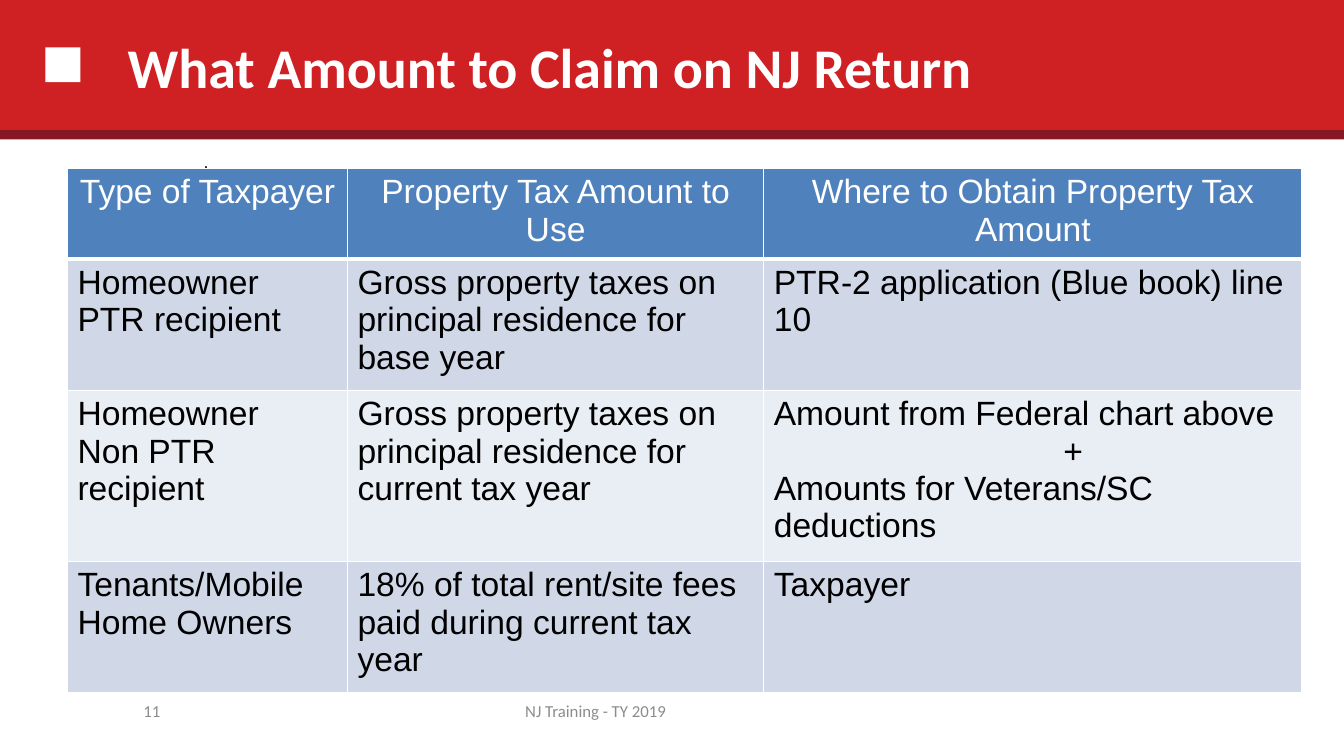
from lxml.etree import SubElement
from pptx import Presentation
from pptx.dml.color import RGBColor
from pptx.enum.shapes import MSO_SHAPE
from pptx.enum.text import MSO_ANCHOR, PP_ALIGN
from pptx.oxml.ns import qn
from pptx.util import Pt

RED = RGBColor(0xCF, 0x21, 0x24)
MAROON = RGBColor(0x84, 0x17, 0x21)
WHITE = RGBColor(0xFF, 0xFF, 0xFF)
BLACK = RGBColor(0, 0, 0)
GREY = RGBColor(0x8C, 0x8C, 0x8C)
BLUE = RGBColor(0x4F, 0x81, 0xBD)
BANDS = [RGBColor(0xD0, 0xD8, 0xE8), RGBColor(0xE9, 0xED, 0xF4)]

WIDTHS = [200, 297.4, 384.5]
HEIGHTS = [60, 87, 114, 87]
ROWS = [
    ["Type of Taxpayer", "Property Tax Amount to Use",
     "Where to Obtain Property Tax Amount"],
    ["Homeowner\nPTR recipient",
     "Gross property taxes on principal residence for base year",
     "PTR-2 application (Blue book) line 10"],
    ["Homeowner\nNon PTR recipient",
     "Gross property taxes on principal residence for current tax year",
     "Amount from Federal chart above\n+\nAmounts for Veterans/SC deductions"],
    ["Tenants/Mobile Home Owners",
     "18% of total rent/site fees paid during current tax year",
     "Taxpayer"],
]


def style(para, size, color, font="Calibri", bold=False):
    for run in para.runs:
        run.font.size = Pt(size)
        run.font.name = font
        run.font.bold = bold
        run.font.color.rgb = color


def add_block(slide, box, color):
    shape = slide.shapes.add_shape(MSO_SHAPE.RECTANGLE, *map(Pt, box))
    shape.shadow.inherit = False
    shape.fill.solid()
    shape.fill.fore_color.rgb = color
    shape.line.fill.background()


def add_text(slide, box, text, size, color, align=PP_ALIGN.LEFT,
             anchor=MSO_ANCHOR.MIDDLE, bold=False):
    frame = slide.shapes.add_textbox(*map(Pt, box)).text_frame
    frame.word_wrap = True
    frame.vertical_anchor = anchor
    frame.text = text
    para = frame.paragraphs[0]
    para.alignment = align
    style(para, size, color, bold=bold)
    return para


def set_edges(cell, sizes):
    props = cell._tc.get_or_add_tcPr()
    for side, size in zip("LRTB", sizes):
        line = SubElement(props, qn("a:ln" + side), w=str(Pt(size)))
        fill = SubElement(line, qn("a:solidFill"))
        SubElement(fill, qn("a:srgbClr"), val=str(WHITE))


def fill_cell(cell, text, head, band):
    set_edges(cell, [1, 1, 1, 3 if head else 1])
    cell.fill.solid()
    cell.fill.fore_color.rgb = BLUE if head else band
    cell.text_frame.text = text
    for para in cell.text_frame.paragraphs:
        para.alignment = PP_ALIGN.CENTER if head else PP_ALIGN.LEFT
        style(para, 24, WHITE if head else BLACK, "Arial")
        if para.text == "+":
            para._p.get_or_add_pPr().set("marL", str(Pt(206.8)))


def add_grid(slide, left, top):
    frame = slide.shapes.add_table(
        len(ROWS), len(WIDTHS), Pt(left), Pt(top),
        Pt(sum(WIDTHS)), Pt(sum(HEIGHTS)))
    table = frame.table
    for col, width in zip(table.columns, WIDTHS):
        col.width = Pt(width)
    for i, texts in enumerate(ROWS):
        table.rows[i].height = Pt(HEIGHTS[i])
        for j, text in enumerate(texts):
            fill_cell(table.cell(i, j), text, i == 0, BANDS[(i + 1) % 2])


def main():
    deck = Presentation()
    deck.slide_width, deck.slide_height = Pt(960), Pt(540)
    slide = deck.slides.add_slide(deck.slide_layouts[6])

    # Title band
    add_block(slide, (0, -0.5, 960, 95.5), RED)
    add_block(slide, (32.4, 33.8, 25, 25), WHITE)
    add_block(slide, (0, 93, 960, 6.5), MAROON)
    add_text(slide, (84.2, 2.2, 767.5, 90), "What Amount to Claim on NJ Return",
             40, WHITE, bold=True)

    # Footer
    add_text(slide, (273.6, 493.2, 303.8, 28.8), "NJ Training - TY 2019",
             12, GREY, PP_ALIGN.CENTER)
    add_text(slide, (48.2, 493.2, 73.4, 28.8), "11", 12, GREY, PP_ALIGN.RIGHT)

    # Body mark, mostly behind the table
    mark = add_text(slide, (84.2, 107.3, 784.8, 357.8), "*", 28, BLACK,
                    anchor=MSO_ANCHOR.TOP)
    mark.space_before = Pt(9)
    mark._p.get_or_add_pPr().set("marL", str(Pt(49)))

    # Tax table
    add_grid(slide, 48.2, 120.2)
    deck.save("out.pptx")


if __name__ == "__main__":
    main()
